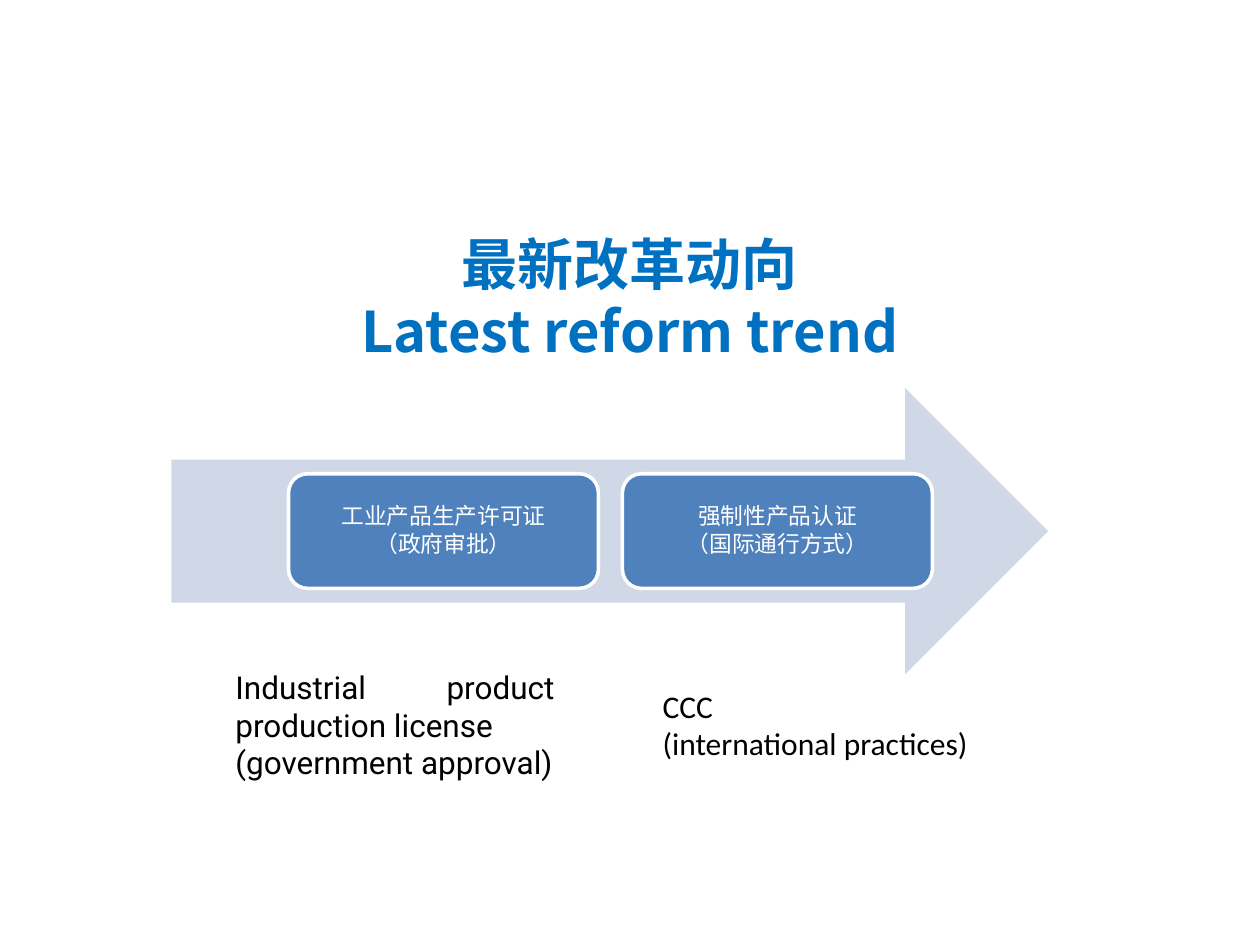
from pptx import Presentation
from pptx import util as u
from pptx.dml.color import RGBColor
from pptx.enum import shapes, text
from pptx.oxml.ns import qn
from lxml import etree

COLORS = {"band": "D0D8E8", "step": "4F81BD", "white": "FFFFFF",
          "title": "0070C0", "black": "000000"}
CJK = "Noto Sans CJK SC"


def color(name):
    return RGBColor.from_string(COLORS[name])


def write_lines(frame, lines, size, font, ink, align, bold=False):
    frame.word_wrap = True
    for index, line in enumerate(lines):
        para = frame.paragraphs[0] if index == 0 else frame.add_paragraph()
        para.text = line
        para.alignment = align
        para.font.size = u.Pt(size)
        para.font.name = font
        para.font.bold = bold
        para.font.color.rgb = color(ink)
        # East Asian characters need their own typeface entry
        latin = para.font._element.find(qn("a:latin"))
        east_asian = etree.Element(qn("a:ea"), typeface=font)
        latin.addnext(east_asian)


def add_title(slide, lines):
    title = slide.shapes.title
    title.left, title.top = u.Inches(0.5), u.Inches(1.73)
    title.width, title.height = u.Inches(9), u.Inches(1.25)
    title.text_frame.vertical_anchor = text.MSO_ANCHOR.MIDDLE
    write_lines(title.text_frame, lines, 32, CJK, "title",
                text.PP_ALIGN.CENTER, bold=True)


def add_block(slide, kind, left, top, width, height, fill):
    block = slide.shapes.add_shape(kind, u.Inches(left), u.Inches(top),
                                   u.Inches(width), u.Inches(height))
    block.shadow.inherit = False
    block.fill.solid()
    block.fill.fore_color.rgb = color(fill)
    block.line.fill.background()
    return block


def add_step(slide, left, lines):
    step = add_block(slide, shapes.MSO_SHAPE.ROUNDED_RECTANGLE,
                     left, 3.76, 2.46, 0.91, "step")
    step.line.color.rgb = color("white")
    step.line.width = u.Pt(2)
    frame = step.text_frame
    frame.vertical_anchor = text.MSO_ANCHOR.MIDDLE
    write_lines(frame, lines, 13, CJK, "white", text.PP_ALIGN.CENTER)
    for para in frame.paragraphs:
        para.line_spacing = 0.9
        para.space_after = u.Pt(1.5)


def add_caption(slide, left, top, width, height, lines, font, align):
    box = slide.shapes.add_textbox(u.Inches(left), u.Inches(top),
                                   u.Inches(width), u.Inches(height))
    write_lines(box.text_frame, lines, 18, font, "black", align)


def main():
    deck = Presentation()
    deck.slide_width, deck.slide_height = u.Inches(10), u.Inches(7.5)
    slide = deck.slides.add_slide(deck.slide_layouts[5])

    # Title
    add_title(slide, ["最新改革动向", "Latest reform trend"])

    # Arrow with the two stages of the reform
    add_block(slide, shapes.MSO_SHAPE.RIGHT_ARROW, 1.36, 3.08, 6.96, 2.27, "band")
    add_step(slide, 2.29, ["工业产品生产许可证", "（政府审批）"])
    add_step(slide, 4.94, ["强制性产品认证", "（国际通行方式）"])

    # English captions
    add_caption(slide, 1.77, 5.25, 2.73, 1.01,
                ["Industrial product production license", "(government approval)"],
                "Roboto", text.PP_ALIGN.JUSTIFY)
    add_caption(slide, 5.16, 5.4, 2.91, 0.71,
                ["CCC", "(international practices)"],
                "Calibri", text.PP_ALIGN.LEFT)

    deck.save("out.pptx")


if __name__ == "__main__":
    main()
